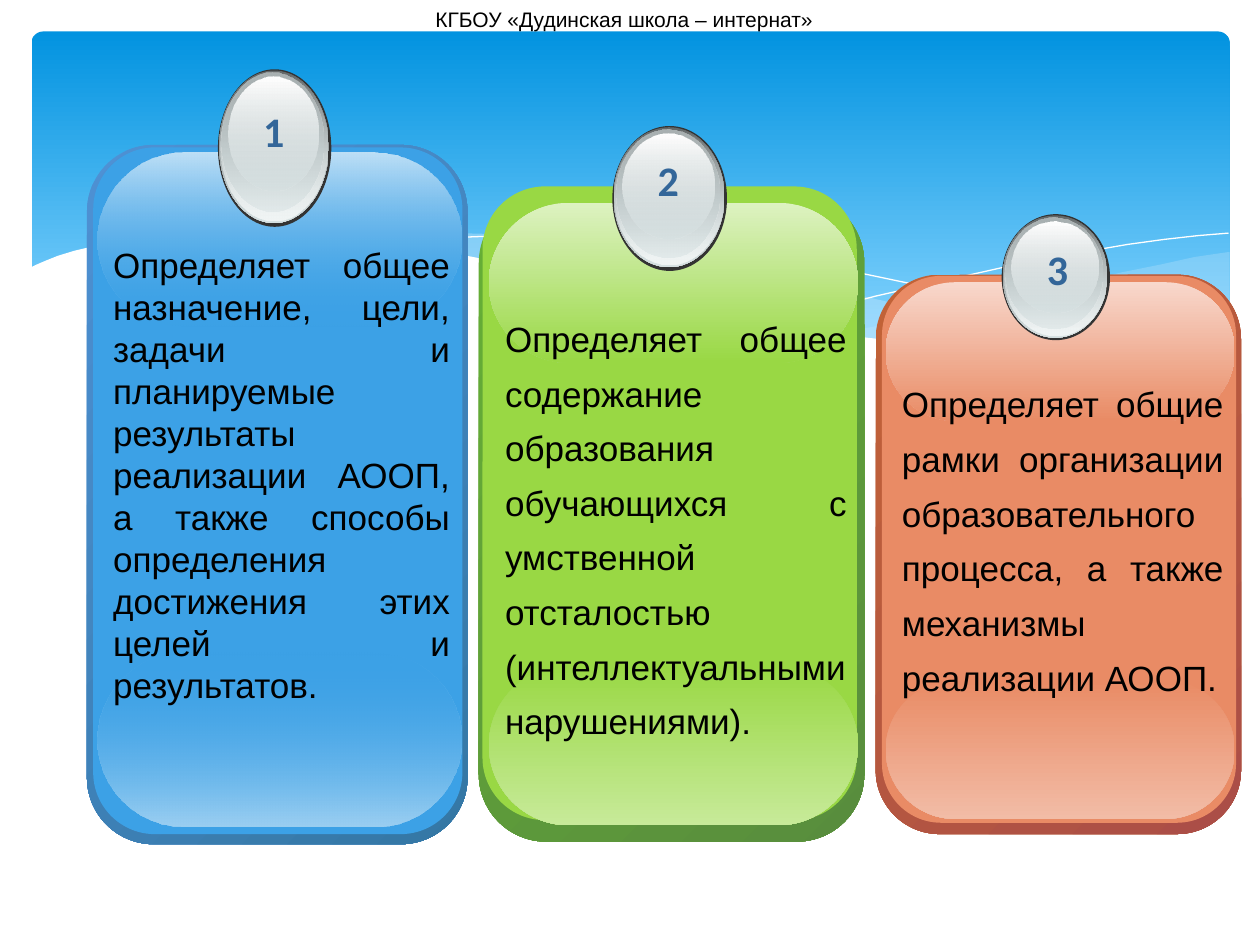
from itertools import zip_longest

from lxml import etree
from pptx import Presentation
from pptx import util as u
from pptx.dml.color import RGBColor
from pptx.enum import shapes, text
from pptx.oxml.ns import qn

PX = 9144  # EMU per px, 100 px to the inch
ROUND, OVAL = shapes.MSO_SHAPE.ROUNDED_RECTANGLE, shapes.MSO_SHAPE.OVAL
BODY = {"size": u.Pt(20), "name": "Arial"}
HEADER = {"size": u.Pt(12), "name": "Arial"}
NUMBER = {"size": u.Pt(24), "name": "Calibri", "bold": True}

LIGHT_WAVES = [
    (29, [(975, 200), (948, 204), (921, 210), (891, 216), (861, 223), (805, 237), (753, 248),
          (706, 257), (661, 265), (691, 269), (719, 272), (745, 275), (769, 277), (803, 278),
          (835, 277), (863, 275), (889, 272), (913, 267), (935, 262), (949, 257), (963, 252),
          (976, 247), (976, 200)]),
    (40, [(893, 273), (866, 269), (837, 265), (807, 260), (775, 254), (741, 247), (706, 240),
          (668, 231), (629, 222), (598, 214), (569, 208), (541, 203), (514, 198), (489, 194),
          (465, 191), (442, 189), (420, 187), (399, 186), (361, 185), (328, 187), (299, 189),
          (286, 191), (323, 196), (362, 203), (404, 211), (449, 222), (491, 232), (530, 240),
          (566, 248), (601, 255), (634, 261), (665, 266), (695, 270), (722, 274), (748, 276),
          (773, 277), (807, 278), (838, 278), (867, 276), (893, 273)]),
]
HAIRLINES = [
    [(309, 195), (318, 194), (335, 191), (353, 189), (374, 188), (401, 187), (433, 187),
     (469, 189), (510, 192), (556, 197), (608, 204), (665, 213), (727, 226), (795, 241),
     (831, 251), (869, 261), (907, 272)],
    [(613, 257), (653, 246), (695, 235), (748, 223), (806, 210), (866, 199), (895, 194),
     (924, 190), (951, 187), (975, 185)],
]
WHITE_WAVE = [
    (977, 246), (959, 253), (940, 259), (920, 265), (899, 269), (875, 273), (850, 275),
    (823, 277), (793, 276), (761, 275), (726, 272), (688, 268), (648, 262), (603, 254),
    (555, 245), (503, 233), (447, 220), (391, 207), (340, 197), (292, 190), (250, 186),
    (211, 184), (177, 184), (146, 185), (119, 187), (95, 191), (76, 195), (59, 199),
    (46, 203), (36, 207), (29, 210), (23, 213), (23, 329), (977, 329)]

# (share of width, share of height, left, top, top colour, bottom colour, opacities)
BADGE_LAYERS = [
    (0.97, 0.968, 1, 1, "636869", "D6E1E2", (100, 100)),
    (0.945, 0.943, 2, 2, "D6E1E2", "F1F5F5", (0, 100)),
    (0.9, 0.88, 3, 3, "AAB2B3", "D6E1E2", (100, 48)),
    (0.8, 0.72, 8, 6, "FFFFFF", "D6E1E2", (100, 38)),
]

CARDS = [
    dict(box=(69, 115, 302, 555), face_shift=(5, 2), rim=("4E91D4", "3477A4"), face="3CA1E6",
         shine=("BEE0F7", "9BCFF2"), fade=0, badge=(173, 55, 90, 125), number="1",
         number_top=24, text_top=73, text_height=604, spacing=1.0,
         body="Определяет общее назначение, цели, задачи и планируемые результаты реализации "
              "АООП, а также способы определения достижения этих целей и результатов."),
    dict(box=(380, 155, 306, 513), face_shift=(3, -7), rim=("66AF35", "588D3D"), face="99D844",
         shine=("DDF2C1", "C7EA99"), fade=100, badge=(486, 100, 91, 115), number="2",
         number_top=18, text_top=82, text_height=572, spacing=1.3,
         body="Определяет общее содержание образования обучающихся с умственной отсталостью "
              "(интеллектуальными нарушениями)."),
    dict(box=(695, 218, 290, 444), face_shift=(5, 1), rim=("C16237", "AB4E47"), face="E98B65",
         shine=("F8D8CC", "F2BCA6"), fade=100, badge=(795, 170, 86, 100), number="3",
         number_top=18, text_top=71, text_height=461, spacing=1.3,
         body="Определяет общие рамки организации образовательного процесса, а также "
              "механизмы реализации АООП."),
]


def emu(*lengths):
    return [round(length * PX) for length in lengths]


def rgb(code):
    return RGBColor.from_string(code)


def paint(shape, colours, opacities=(), angle=90, end=1.0):
    """Fill with one colour or a two-colour gradient, without outline or shadow."""
    shape.shadow.inherit = False
    shape.line.fill.background()
    if len(colours) == 1:
        shape.fill.solid()
        shape.fill.fore_color.rgb = rgb(colours[0])
    else:
        shape.fill.gradient()
        shape.fill.gradient_angle = 360 - angle
        for stop, colour, position in zip(shape.fill.gradient_stops, colours, (0, end)):
            stop.color.rgb = rgb(colour)
            stop.position = position
    nodes = list(shape.element.spPr.iter(qn("a:srgbClr")))
    for node, opacity in zip_longest(nodes, opacities, fillvalue=100):
        if opacity < 100:
            etree.SubElement(node, qn("a:alpha")).set("val", str(opacity * 1000))


def add_preset(slide, kind, box, colours, corner=None, **look):
    shape = slide.shapes.add_shape(kind, *emu(*box))
    if corner is not None:
        shape.adjustments[0] = corner
    paint(shape, colours, **look)


def add_outline(slide, points, close=True):
    builder = slide.shapes.build_freeform(*points[0], scale=PX)
    builder.add_line_segments(points[1:], close=close)
    return builder.convert_to_shape()


def add_text(slide, box, words, font, colour="000000", align=text.PP_ALIGN.LEFT, spacing=1.0):
    frame = slide.shapes.add_textbox(*emu(*box)).text_frame
    frame.word_wrap = True
    paragraph = frame.paragraphs[0]
    paragraph.alignment, paragraph.line_spacing = align, spacing
    run = paragraph.add_run()
    run.text = words
    for key, value in font.items():
        setattr(run.font, key, value)
    run.font.color.rgb = rgb(colour)


def add_backdrop(slide, box):
    """Blue sky panel with waves along its lower edge."""
    add_preset(slide, ROUND, box, ("0293E0", "83D3FE"), corner=0.034, end=0.9)
    for opacity, points in LIGHT_WAVES:
        paint(add_outline(slide, points), ["C6E7FC"], [opacity])
    for points in HAIRLINES:
        hairline = add_outline(slide, points, close=False)
        hairline.shadow.inherit = False
        hairline.fill.background()
        hairline.line.color.rgb = rgb("FFFFFF")
        hairline.line.width = 0
    paint(add_outline(slide, WHITE_WAVE), ["FFFFFF"])


def add_badge(slide, box, number, number_top):
    x, y, w, h = box
    add_preset(slide, OVAL, box, ["333333"])
    for wide, high, dx, dy, top, bottom, opacities in BADGE_LAYERS:
        add_preset(slide, OVAL, (x + dx, y + dy, round(w * wide), round(h * high)),
                   (top, bottom), opacities=opacities)
    add_text(slide, (x + 26, y + number_top, 49, round(h * 0.71)), number, NUMBER, "336699")


def add_card(slide, box, face_shift, rim, face, shine, fade, badge, number, number_top,
             text_top, text_height, spacing, body):
    x, y, w, h = box
    dx, dy = face_shift
    gloss_height, gap = round(h * 0.248), round(h * 0.026)
    top_gloss = (x + 8, y + 6, w - 13, gloss_height)
    bottom_gloss = (x + 8, y + h - gap - gloss_height, w - 13, gloss_height)

    add_preset(slide, ROUND, box, rim, corner=0.175, angle=45)
    add_preset(slide, ROUND, (x + dx, y + dy, w - 9, h - 10), [face], corner=0.167)
    add_preset(slide, ROUND, bottom_gloss, (face, shine[1]), corner=0.5, opacities=(fade, 100))
    add_preset(slide, ROUND, top_gloss, (shine[0], face), corner=0.5, opacities=(100, fade))
    add_badge(slide, badge, number, number_top)
    add_text(slide, (x + 11, y + text_top, w - 15, text_height), body, BODY,
             align=text.PP_ALIGN.JUSTIFY, spacing=spacing)


def main():
    deck = Presentation()
    deck.slide_width, deck.slide_height = emu(1000, 750)
    slide = deck.slides.add_slide(deck.slide_layouts[6])
    add_backdrop(slide, (25, 25, 951, 270))
    for card in CARDS:
        add_card(slide, **card)
    add_text(slide, (23, 0, 945, 30), "КГБОУ «Дудинская школа – интернат»", HEADER,
             align=text.PP_ALIGN.CENTER)
    deck.save("out.pptx")


if __name__ == "__main__":
    main()
